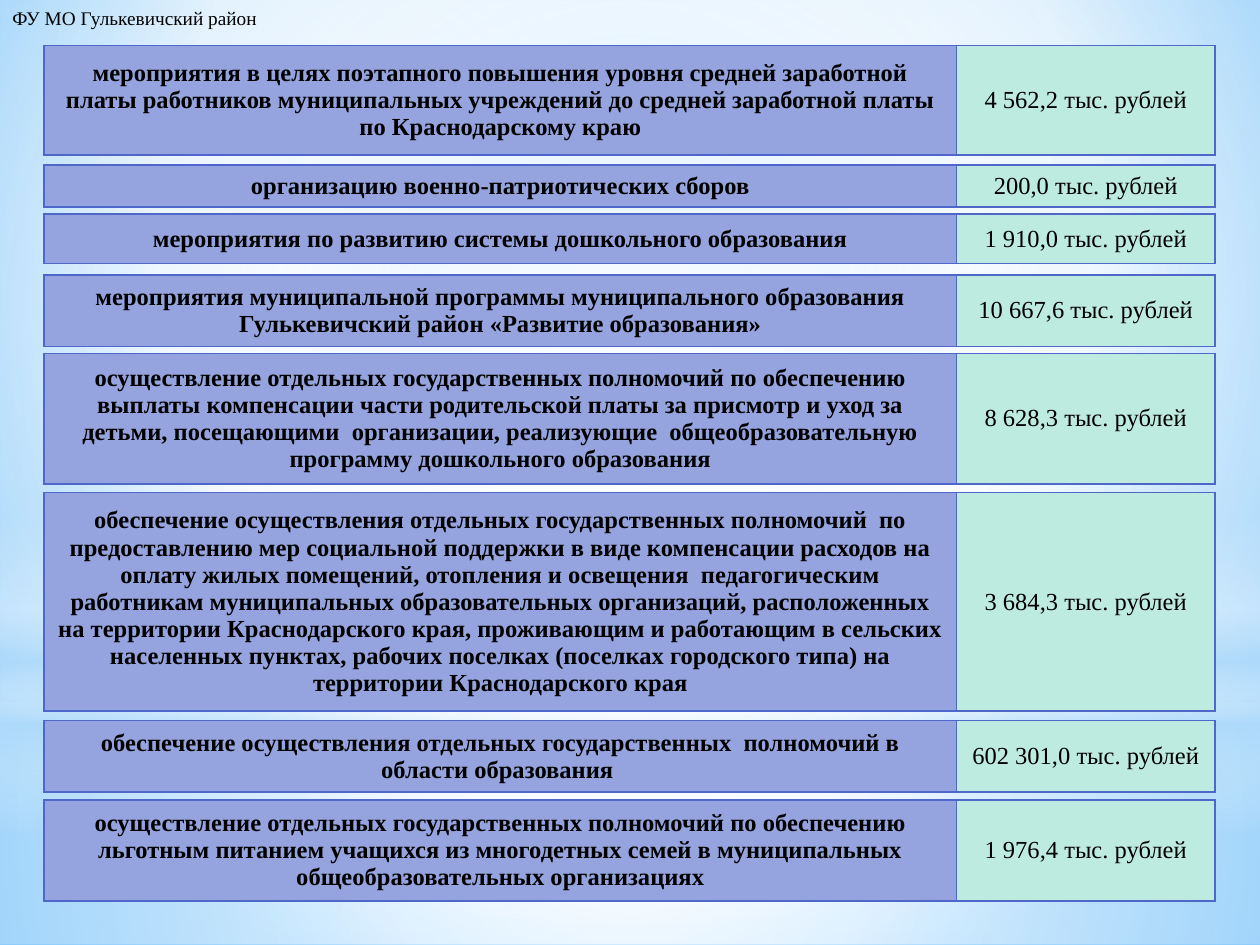
from dataclasses import dataclass

from lxml.etree import SubElement
from pptx import Presentation
from pptx.dml.color import RGBColor
from pptx.enum.shapes import MSO_SHAPE as Shape
from pptx.enum.text import MSO_ANCHOR as Anchor, MSO_AUTO_SIZE as AutoSize, PP_ALIGN as Align
from pptx.oxml.ns import qn
from pptx.util import Pt


@dataclass(frozen=True)
class Theme:
    font: str = "Times New Roman"
    header_size: float = 11
    cell_size: float = 14
    text: str = "000000"
    purpose_fill: str = "95A4DE"
    amount_fill: str = "BEEBDF"
    border: str = "4E67C8"
    border_width: float = 1
    white: str = "FFFFFF"
    haze: str = "B4DCFA"
    sky: str = "9ED5FF"
    deep_sky: str = "5BB9FF"


class SlideBuilder:
    def __init__(self, slide, theme):
        self.slide = slide
        self.theme = theme

    def write_gradient(self, owner, stops, focus=None):
        """Fill with (position, colour, opacity) stops, all in percent.

        focus holds the left, top, right, bottom insets of a circular gradient;
        without it the gradient runs downwards.
        """
        gradient = owner.find(".//" + qn("a:gradFill"))
        for child in list(gradient):
            gradient.remove(child)
        stop_list = SubElement(gradient, qn("a:gsLst"))
        for position, color, opacity in stops:
            stop = SubElement(stop_list, qn("a:gs"), pos=str(position * 1000))
            rgb = SubElement(stop, qn("a:srgbClr"), val=color)
            if opacity < 100:
                SubElement(rgb, qn("a:alpha"), val=str(opacity * 1000))
        if focus:
            circle = SubElement(gradient, qn("a:path"), path="circle")
            insets = {side: str(inset * 1000) for side, inset in zip("ltrb", focus)}
            SubElement(circle, qn("a:fillToRect"), **insets)
        else:
            SubElement(gradient, qn("a:lin"), ang="5400000", scaled="0")

    def background(self, stops, focus):
        self.slide.background.fill.gradient()
        self.write_gradient(self.slide.element, stops, focus)

    def glow(self, kind, top, height, stops, focus=None):
        """Add a full-width translucent shape."""
        shape = self.slide.shapes.add_shape(kind, 0, Pt(top), Pt(720), Pt(height))
        shape.shadow.inherit = False
        shape.line.fill.background()
        shape.fill.gradient()
        self.write_gradient(shape.element, stops, focus)

    def style_font(self, paragraph, size, bold=False):
        font = paragraph.font
        font.name = self.theme.font
        font.size = Pt(size)
        font.bold = bold
        font.color.rgb = RGBColor.from_string(self.theme.text)

    def header(self, text, width, height):
        frame = self.slide.shapes.add_textbox(0, 0, Pt(width), Pt(height)).text_frame
        frame.word_wrap = False
        frame.auto_size = AutoSize.SHAPE_TO_FIT_TEXT
        frame.text = text
        self.style_font(frame.paragraphs[0], self.theme.header_size)

    def cell(self, cell, text, fill, bold):
        cell.text = text
        cell.vertical_anchor = Anchor.MIDDLE
        cell.fill.solid()
        cell.fill.fore_color.rgb = RGBColor.from_string(fill)
        paragraph = cell.text_frame.paragraphs[0]
        paragraph.alignment = Align.CENTER
        self.style_font(paragraph, self.theme.cell_size, bold)
        self.borders(cell)

    def borders(self, cell):
        properties = cell._tc.get_or_add_tcPr()
        for index, side in enumerate("LRTB"):
            line = SubElement(properties, qn("a:ln" + side), w=str(Pt(self.theme.border_width)))
            solid = SubElement(line, qn("a:solidFill"))
            SubElement(solid, qn("a:srgbClr"), val=self.theme.border)
            properties.insert(index, line)

    def expense(self, top, height, purpose, amount):
        """Add a one-row table with the purpose and its amount."""
        widths = (521.5, 147.5)
        table = self.slide.shapes.add_table(
            1, 2, Pt(25.2), Pt(top), Pt(sum(widths)), Pt(height)
        ).table
        for column, width in zip(table.columns, widths):
            column.width = Pt(width)
        self.cell(table.cell(0, 0), purpose, self.theme.purpose_fill, True)
        self.cell(table.cell(0, 1), amount + " тыс. рублей", self.theme.amount_fill, False)


EXPENSES = [
    (26, 62.6, "мероприятия в целях поэтапного повышения уровня средней заработной платы "
     "работников муниципальных учреждений до средней заработной платы по Краснодарскому краю",
     "4 562,2"),
    (94.3, 23.8, "организацию военно-патриотических сборов", "200,0"),
    (122.4, 28.1, "мероприятия по развитию системы дошкольного образования", "1 910,0"),
    (157, 38.2, "мероприятия муниципальной программы муниципального образования "
     "Гулькевичский район «Развитие образования»", "10 667,6"),
    (202, 74.5, "осуществление отдельных государственных полномочий по обеспечению выплаты "
     "компенсации части родительской платы за присмотр и уход за детьми, посещающими  "
     "организации, реализующие  общеобразовательную программу дошкольного образования",
     "8 628,3"),
    (281.5, 115.2, "обеспечение осуществления отдельных государственных полномочий  по "
     "предоставлению мер социальной поддержки в виде компенсации расходов на оплату жилых "
     "помещений, отопления и освещения  педагогическим работникам муниципальных "
     "образовательных организаций, расположенных на территории Краснодарского края, "
     "проживающим и работающим в сельских населенных пунктах, рабочих поселках (поселках "
     "городского типа) на территории Краснодарского края", "3 684,3"),
    (411.8, 38.2, "обеспечение осуществления отдельных государственных  полномочий в области "
     "образования ", "602 301,0"),
    (457.2, 53.5, "осуществление отдельных государственных полномочий по обеспечению льготным "
     "питанием учащихся из многодетных семей в муниципальных общеобразовательных организациях",
     "1 976,4"),
]


def main():
    presentation = Presentation()
    presentation.slide_width = Pt(720)
    presentation.slide_height = Pt(540)
    theme = Theme()
    builder = SlideBuilder(presentation.slides.add_slide(presentation.slide_layouts[6]), theme)

    white, haze = theme.white, theme.haze
    center = (50, 50, 50, 50)
    builder.background(
        [(0, theme.sky, 100), (60, white, 100), (100, theme.deep_sky, 100)], (20, 10, 20, 60)
    )
    builder.glow(Shape.RECTANGLE, 402, 138,
                 [(0, white, 91), (37, white, 76), (100, haze, 79)], center)
    builder.glow(Shape.RECTANGLE, 0, 402,
                 [(0, white, 89), (48, white, 62), (100, haze, 79)], center)
    builder.glow(Shape.RECTANGLE, 296.6, 180,
                 [(0, white, 0), (29, white, 30), (45, haze, 40),
                  (55, white, 26), (65, haze, 60), (100, white, 0)])
    builder.glow(Shape.OVAL, 126, 402, [(0, white, 100), (56, white, 0)], center)

    builder.header("ФУ МО Гулькевичский район", 157, 20.9)
    for expense in EXPENSES:
        builder.expense(*expense)

    presentation.save("out.pptx")


if __name__ == "__main__":
    main()
